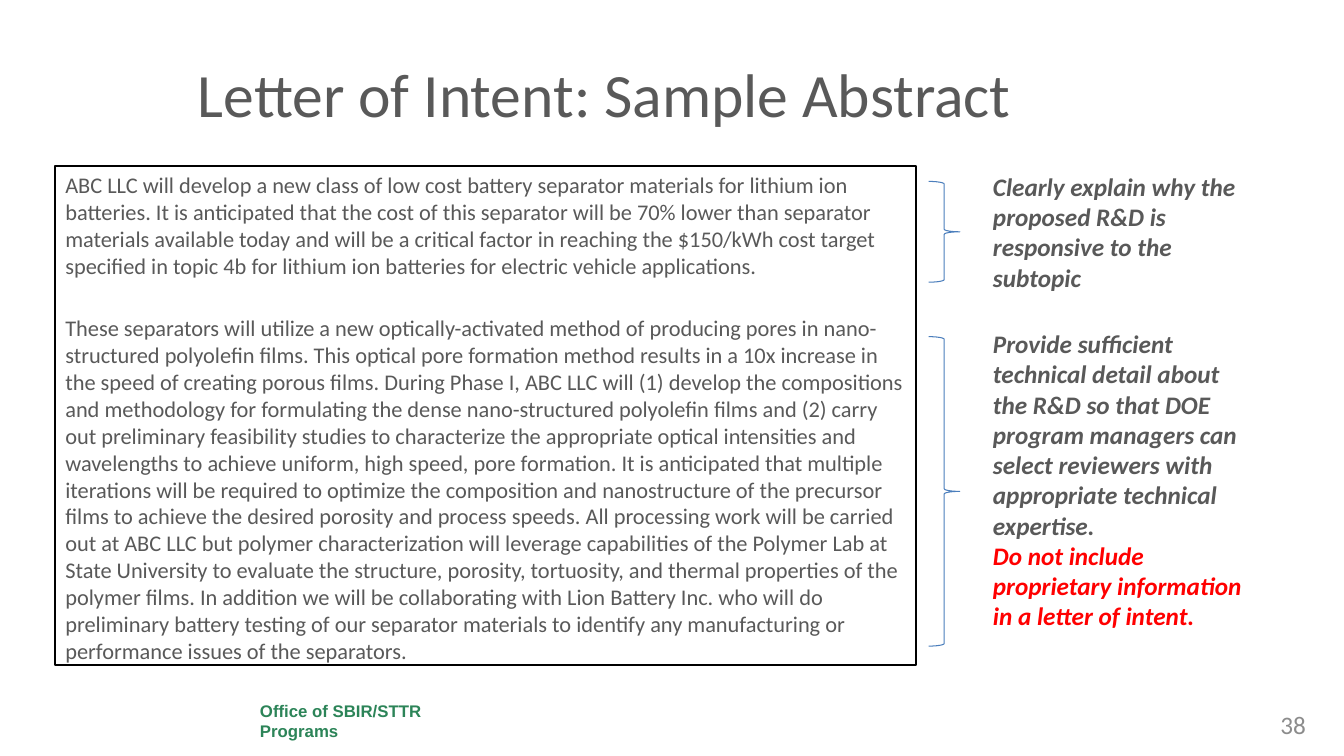
import pptx
import pptx.dml.color
import pptx.enum.shapes
import pptx.enum.text
import pptx.util

WIDTH, HEIGHT = 13.33, 7.5
COLORS = {
    "paper": "FFFFFF",
    "text": "595959",
    "frame": "000000",
    "brace": "4B7EBC",
    "warning": "FF0000",
    "office": "2C8458",
    "number": "8C8C8C",
}
# Each paragraph of the abstract is a list of sentences.
ABSTRACT = [
    [
        "ABC LLC will develop a new class of low cost battery separator materials for lithium ion "
        "batteries.",
        "It is anticipated that the cost of this separator will be 70% lower than separator "
        "materials available today and will be a critical factor in reaching the $150/kWh cost "
        "target specified in topic 4b for lithium ion batteries for electric vehicle applications.",
    ],
    [
        "These separators will utilize a new optically-activated method of producing pores in "
        "nano-structured polyolefin films.",
        "This optical pore formation method results in a 10x increase in the speed of creating "
        "porous films.",
        "During Phase I, ABC LLC will (1) develop the compositions and methodology for formulating "
        "the dense nano-structured polyolefin films and (2) carry out preliminary feasibility "
        "studies to characterize the appropriate optical intensities and wavelengths to achieve "
        "uniform, high speed, pore formation.",
        "It is anticipated that multiple iterations will be required to optimize the composition "
        "and nanostructure of the precursor films to achieve the desired porosity and process "
        "speeds.",
        "All processing work will be carried out at ABC LLC but polymer characterization will "
        "leverage capabilities of the Polymer Lab at State University to evaluate the structure, "
        "porosity, tortuosity, and thermal properties of the polymer films.",
        "In addition we will be collaborating with Lion Battery Inc. who will do preliminary "
        "battery testing of our separator materials to identify any manufacturing or performance "
        "issues of the separators.",
    ],
]
RESPONSIVE_NOTE = [
    ("Clearly explain why the proposed R&D is responsive to the subtopic", "text"),
]
DETAIL_NOTE = [
    ("Provide sufficient technical detail about the R&D so that DOE program managers can select "
     "reviewers with appropriate technical expertise.", "text"),
    ("Do not include proprietary information in a letter of intent.", "warning"),
]


def color(name):
    return pptx.dml.color.RGBColor.from_string(COLORS[name])


def inches(box):
    return [pptx.util.Inches(length) for length in box]


def add_text(slide, box, lines, size, font="Calibri", bold=False, italic=False,
             align=pptx.enum.text.PP_ALIGN.LEFT, anchor=pptx.enum.text.MSO_ANCHOR.TOP, gap=0):
    """Add a text box; lines are (text, color name) pairs, gap is the points between them."""
    shape = slide.shapes.add_textbox(*inches(box))
    frame = shape.text_frame
    frame.word_wrap = True
    frame.vertical_anchor = anchor
    for index, (text, color_name) in enumerate(lines):
        paragraph = frame.add_paragraph() if index else frame.paragraphs[0]
        paragraph.text = text
        paragraph.alignment = align
        paragraph.space_before = pptx.util.Pt(gap if index else 0)
        paragraph.font.name = font
        paragraph.font.size = pptx.util.Pt(size)
        paragraph.font.bold = bold
        paragraph.font.italic = italic
        paragraph.font.color.rgb = color(color_name)
    return shape


def add_title(slide, box):
    add_text(slide, box, [("Letter of Intent: Sample Abstract", "text")], 44,
             align=pptx.enum.text.PP_ALIGN.CENTER, anchor=pptx.enum.text.MSO_ANCHOR.MIDDLE)


def add_abstract(slide, box):
    lines = [(" ".join(sentences), "text") for sentences in ABSTRACT]
    shape = add_text(slide, box, lines, 16, gap=25.5)
    shape.line.color.rgb = color("frame")
    shape.line.width = pptx.util.Pt(1.5)


def add_note(slide, box, lines, brace_offset, brace_height):
    """Fill the box with a brace on its left and the note's text on its right."""
    left, top, width, height = box
    text_offset = 0.54
    brace = slide.shapes.add_shape(pptx.enum.shapes.MSO_SHAPE.RIGHT_BRACE,
                                   *inches((left, top + brace_offset, 0.31, brace_height)))
    brace.shadow.inherit = False
    brace.fill.background()
    brace.line.color.rgb = color("brace")
    brace.line.width = pptx.util.Pt(0.75)
    add_text(slide, (left + text_offset, top, width - text_offset, height), lines, 18,
             bold=True, italic=True)


def add_footer(slide, box):
    """Place the office name and the slide number in the strip."""
    left, top, width, height = box
    office = add_text(slide, (left + 2.48, top, 2.11, height),
                      [("Office of SBIR/STTR Programs", "office")], 12, font="Arial",
                      bold=True, anchor=pptx.enum.text.MSO_ANCHOR.MIDDLE)
    office.fill.solid()
    office.fill.fore_color.rgb = color("paper")
    number_width = 0.73
    add_text(slide, (left + width - number_width, top + 0.08, number_width, 0.4),
             [("38", "number")], 18)


def main():
    presentation = pptx.Presentation()
    presentation.slide_width, presentation.slide_height = inches((WIDTH, HEIGHT))
    slide = presentation.slides.add_slide(presentation.slide_layouts[6])
    body_top, notes_left = 0.22 * HEIGHT, 9.21
    add_footer(slide, (0, 6.91, WIDTH, 0.48))
    add_title(slide, (0, 0.04 * HEIGHT, 0.9 * WIDTH, 1.25))
    add_abstract(slide, (0.55, body_top, 8.54, 0.66 * HEIGHT))
    add_note(slide, (notes_left, body_top, 3.15, 1.31), RESPONSIVE_NOTE, 0.15, 1)
    add_note(slide, (notes_left, body_top + 1.56, 3.28, 3.13), DETAIL_NOTE, 0.13, 3.07)
    presentation.save("out.pptx")


if __name__ == "__main__":
    main()
